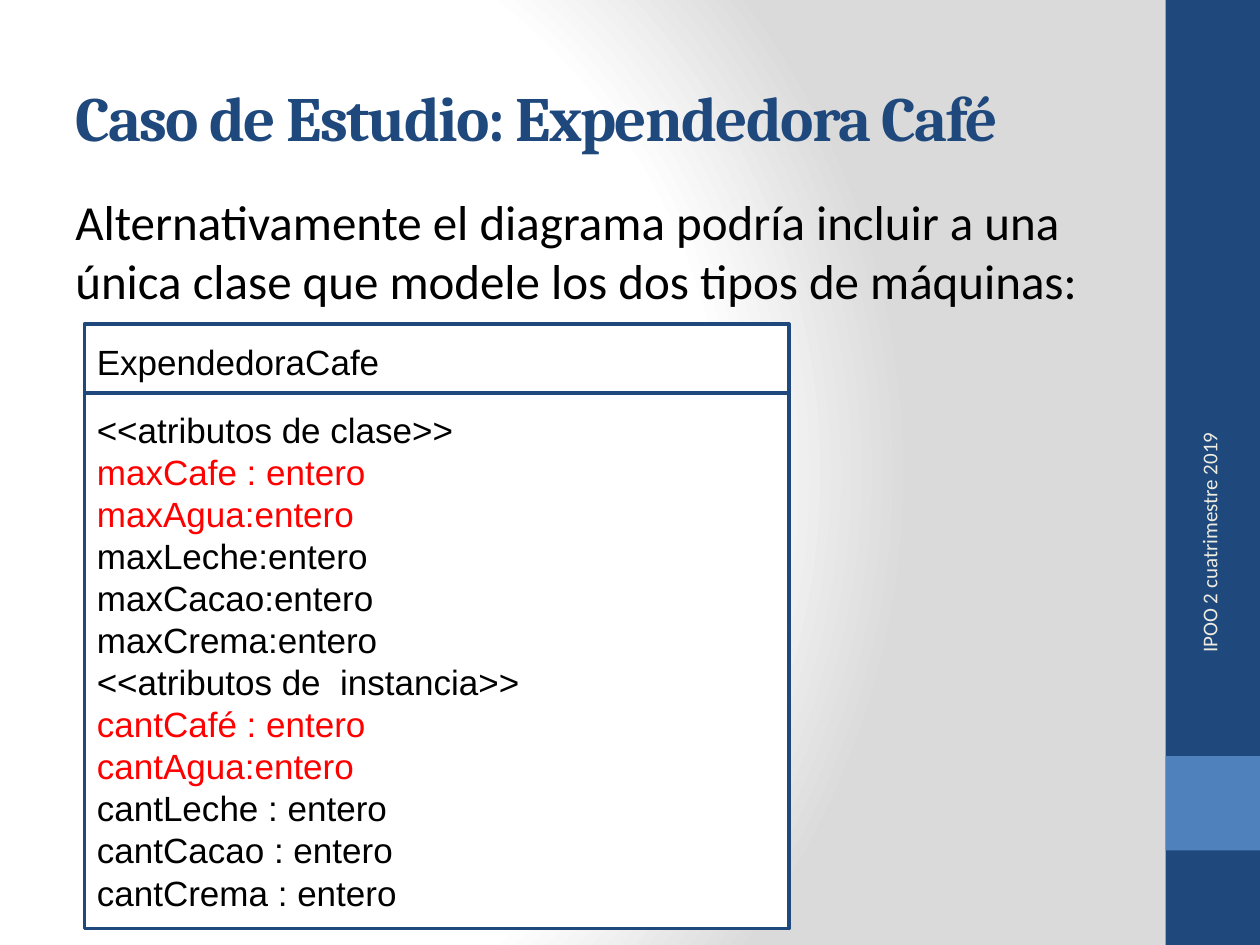
from lxml.etree import SubElement
from pptx import Presentation
from pptx.dml.color import RGBColor
from pptx.enum.shapes import MSO_SHAPE
from pptx.enum.text import MSO_ANCHOR, PP_ALIGN
from pptx.oxml.ns import qn
from pptx.util import Inches, Pt

CELL = 0.25
COLUMNS, ROWS = 40, 30
NAVY, BLUE, CREAM = "1F497D", "4F81BD", "EEECE1"
WHITE, GREY, BLACK, RED = "FFFFFF", "DADADA", "000000", "FF0000"
CLASS_FONT = {"name": "Arial", "size": Pt(20)}
CLASS_LEFT, CLASS_WIDTH = 2.68, 22.36
MEMBERS = [
    ("<<atributos de clase>>", BLACK),
    ("maxCafe : entero", RED),
    ("maxAgua:entero", RED),
    ("maxLeche:entero", BLACK),
    ("maxCacao:entero", BLACK),
    ("maxCrema:entero", BLACK),
    ("<<atributos de  instancia>>", BLACK),
    ("cantCafé : entero", RED),
    ("cantAgua:entero", RED),
    ("cantLeche : entero", BLACK),
    ("cantCacao : entero", BLACK),
    ("cantCrema : entero", BLACK),
]


def color(value):
    """Turn a hex string into a colour."""
    return RGBColor.from_string(value)


def grid(*cells):
    """Turn grid columns and rows into lengths."""
    return [Inches(CELL * cell) for cell in cells]


def apply(target, values):
    """Set attributes of an object from a dict."""
    for name, value in values.items():
        setattr(target, name, value)


def paint_background(page):
    """Give the page a circular gradient from white to grey."""
    page.background.fill.solid()
    holder = page.element.find(".//" + qn("p:bgPr"))
    holder.remove(holder.find(qn("a:solidFill")))
    gradient = holder.makeelement(qn("a:gradFill"), {"rotWithShape": "1"})
    holder.insert(0, gradient)
    stops = SubElement(gradient, qn("a:gsLst"))
    for share, value in ((0, WHITE), (75, WHITE), (100, GREY)):
        stop = SubElement(stops, qn("a:gs"), pos=str(share * 1000))
        SubElement(stop, qn("a:srgbClr"), val=value)
    circle = SubElement(gradient, qn("a:path"), {"path": "circle"})
    SubElement(circle, qn("a:fillToRect"), l="20000", t="50000", r="100000", b="50000")


def write(box, lines, font, frame=None, para_format=None, spacing=None):
    """Write coloured lines into a box, one paragraph each."""
    apply(box.text_frame, {"word_wrap": True, **(frame or {})})
    for index, (text, value) in enumerate(lines):
        para = box.text_frame.paragraphs[0] if index == 0 else box.text_frame.add_paragraph()
        apply(para, {"alignment": PP_ALIGN.LEFT, **(para_format or {})})
        span = para.add_run()
        span.text = text
        apply(span.font, font)
        span.font.color.rgb = color(value)
        if spacing is not None:
            span.font._element.set("spc", str(spacing * 100))


def add_text(page, cells, lines, font, **formats):
    """Add a text box at a grid place."""
    box = page.shapes.add_textbox(*grid(*cells))
    write(box, lines, font, **formats)
    return box


def add_block(page, cells, fill, outline=None):
    """Add a plain rectangle, outlined on request."""
    box = page.shapes.add_shape(MSO_SHAPE.RECTANGLE, *grid(*cells))
    box.shadow.inherit = False
    box.fill.solid()
    box.fill.fore_color.rgb = color(fill)
    if outline:
        box.line.color.rgb = color(outline)
        box.line.width = Pt(2)
    else:
        box.line.fill.background()
    return box


def add_compartment(page, top, height, lines):
    """Add one compartment of the class diagram."""
    box = add_block(page, (CLASS_LEFT, top, CLASS_WIDTH, height), WHITE, NAVY)
    write(box, lines, CLASS_FONT, frame={"vertical_anchor": MSO_ANCHOR.MIDDLE})


def main():
    """Build and save the deck."""
    deck = Presentation()
    apply(deck, {"slide_width": Inches(CELL * COLUMNS), "slide_height": Inches(CELL * ROWS)})
    page = deck.slides.add_slide(deck.slide_layouts[6])
    middle = {"vertical_anchor": MSO_ANCHOR.MIDDLE}
    paint_background(page)
    add_block(page, (COLUMNS - 3, 0, 3, ROWS), NAVY)
    add_block(page, (COLUMNS - 3, 24, 3, 3), BLUE)
    add_text(page, (2, 1.2, 33.32, 5), [("Caso de Estudio: Expendedora Café", NAVY)],
             {"name": "Cambria", "size": Pt(36), "bold": True}, frame=middle, spacing=-1)
    statement = ("Alternativamente el diagrama podría incluir a una "
                 "única clase que modele los dos tipos de máquinas:")
    add_text(page, (2, 5.88, 33.32, 21), [(statement, BLACK)],
             {"name": "Calibri", "size": Pt(28)}, para_format={"space_before": Pt(6)})
    footer = add_text(page, (33.2, 17.72, 10.36, 1.6), [("IPOO 2 cuatrimestre 2019", CREAM)],
                      {"name": "Calibri", "size": Pt(12)}, frame=middle,
                      para_format={"alignment": PP_ALIGN.RIGHT})
    footer.rotation = 270
    add_compartment(page, 10.28, 2.36, [("ExpendedoraCafe", BLACK)])
    add_compartment(page, 12.48, 17, MEMBERS)
    deck.save("out.pptx")


if __name__ == "__main__":
    main()
